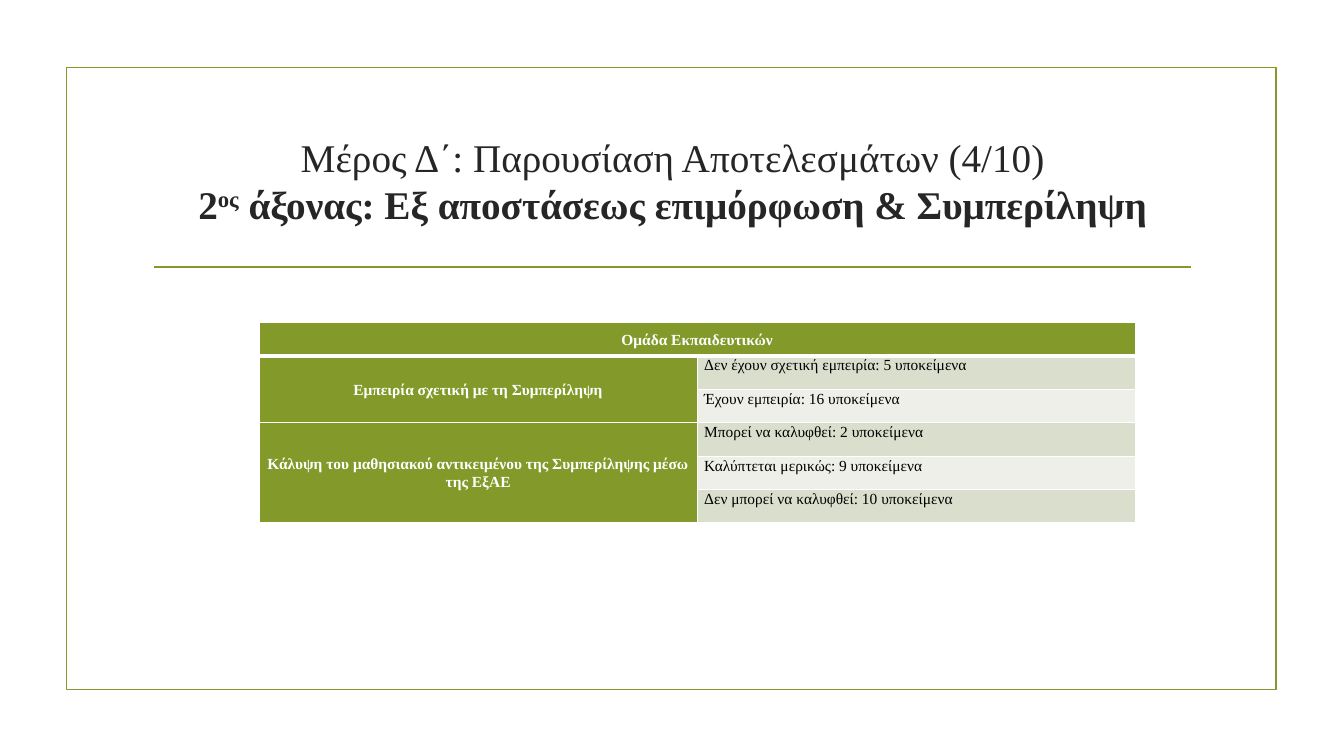
import pptx
import pptx.util
import pptx.dml.color
import pptx.enum.shapes
import pptx.enum.text
import pptx.oxml
import pptx.oxml.ns
from dataclasses import dataclass


@dataclass
class Theme:
    font: str = "Times New Roman"
    green: str = "83992A"
    title: str = "262626"
    black: str = "000000"
    white: str = "FFFFFF"
    bands: tuple = ("D9DECD", "EDEFE8")
    title_size: int = 28
    cell_size: int = 11
    rule_width: float = 1.25


theme = Theme()
rgb = pptx.dml.color.RGBColor.from_string
Inches, Pt = pptx.util.Inches, pptx.util.Pt
PP_ALIGN = pptx.enum.text.PP_ALIGN
MSO_ANCHOR = pptx.enum.text.MSO_ANCHOR


def style_run(r, size, color, bold):
    r.font.name = theme.font
    r.font.size = Pt(size)
    r.font.color.rgb = rgb(color)
    r.font.bold = bold


def add_border(cell, side, width):
    ln = pptx.oxml.parse_xml(
        f'<a:ln{side} {pptx.oxml.ns.nsdecls("a")} w="{Pt(width)}">'
        f'<a:solidFill><a:srgbClr val="{theme.white}"/></a:solidFill></a:ln{side}>')
    cell._tc.get_or_add_tcPr().append(ln)


prs = pptx.Presentation()
prs.slide_width, prs.slide_height = Inches(13.33), Inches(7.5)
s = prs.slides.add_slide(prs.slide_layouts[5])

# Frame
frame = s.shapes.add_shape(pptx.enum.shapes.MSO_SHAPE.RECTANGLE,
                           Inches(0.66), Inches(0.67), Inches(12), Inches(6.17))
frame.shadow.inherit = False
frame.fill.background()
frame.line.color.rgb = rgb(theme.green)
frame.line.width = Pt(theme.rule_width)

# Rule under the title
rule = s.shapes.add_connector(pptx.enum.shapes.MSO_CONNECTOR.STRAIGHT,
                              Inches(1.53), Inches(2.65), Inches(11.81), Inches(2.65))
rule.line.color.rgb = rgb(theme.green)
rule.line.width = Pt(theme.rule_width)
rule._element.spPr.append(
    pptx.oxml.parse_xml(f'<a:effectLst {pptx.oxml.ns.nsdecls("a")}/>'))

# Title
title = s.shapes.title
title.left, title.top = Inches(1.42), Inches(1.07)
title.width, title.height = Inches(10.5), Inches(1.43)
tf = title.text_frame
tf.word_wrap = True
tf.auto_size = pptx.enum.text.MSO_AUTO_SIZE.NONE
tf.vertical_anchor = MSO_ANCHOR.MIDDLE
p = tf.paragraphs[0]
p.alignment = PP_ALIGN.CENTER
title_runs = [
    ("Μέρος Δ΄: Παρουσίαση Αποτελεσμάτων (4/10)", False, 0),
    ("2", True, 0),
    ("ος", True, 30),
    (" άξονας: Εξ αποστάσεως επιμόρφωση & Συμπερίληψη", True, 0),
]
for i, (text, bold, raised) in enumerate(title_runs):
    r = p.add_run()
    r.text = text
    style_run(r, theme.title_size, theme.title, bold)
    if raised:
        r.font._element.set("baseline", str(raised * 1000))
    if i == 0:
        p.add_line_break()
        p._p[-1].append(pptx.oxml.parse_xml(
            f'<a:rPr {pptx.oxml.ns.nsdecls("a")} sz="{theme.title_size * 100}"/>'))

# Table: a header, then groups of answers
header = "Ομάδα Εκπαιδευτικών"
groups = [
    ("Εμπειρία σχετική με τη Συμπερίληψη",
     ["Δεν έχουν σχετική εμπειρία: 5 υποκείμενα",
      "Έχουν εμπειρία: 16 υποκείμενα"]),
    ("Κάλυψη του μαθησιακού αντικειμένου της Συμπερίληψης μέσω της ΕξΑΕ",
     ["Μπορεί να καλυφθεί: 2 υποκείμενα",
      "Καλύπτεται μερικώς: 9 υποκείμενα",
      "Δεν μπορεί να καλυφθεί: 10 υποκείμενα"]),
]
rows = [(header, "")]
for label, answers in groups:
    rows += [(label if i == 0 else "", answer) for i, answer in enumerate(answers)]

table = s.shapes.add_table(len(rows), 2, Inches(2.57), Inches(3.2),
                           Inches(8.69), Inches(1.99)).table
for row, texts in enumerate(rows):
    for col, text in enumerate(texts):
        cell = table.cell(row, col)
        is_label = row == 0 or col == 0
        cell.margin_left = cell.margin_right = Inches(0.07)
        cell.margin_top = cell.margin_bottom = 0
        cell.vertical_anchor = MSO_ANCHOR.MIDDLE if is_label else MSO_ANCHOR.TOP
        for side in "LRTB":
            heavy = (row, side) in ((0, "B"), (1, "T"))
            add_border(cell, side, 3 if heavy else 1)
        cell.fill.solid()
        cell.fill.fore_color.rgb = rgb(
            theme.green if is_label else theme.bands[(row - 1) % 2])
        p = cell.text_frame.paragraphs[0]
        p.text = text
        p.alignment = PP_ALIGN.CENTER if is_label else PP_ALIGN.LEFT
        p.line_spacing = 1.07
        p.font.size = Pt(theme.cell_size)
        for r in p.runs:
            style_run(r, theme.cell_size,
                      theme.white if is_label else theme.black, is_label)

# Merged cells
table.cell(0, 0).merge(table.cell(0, 1))
first = 1
for label, answers in groups:
    last = first + len(answers) - 1
    table.cell(first, 0).merge(table.cell(last, 0))
    first = last + 1

prs.save("out.pptx")
